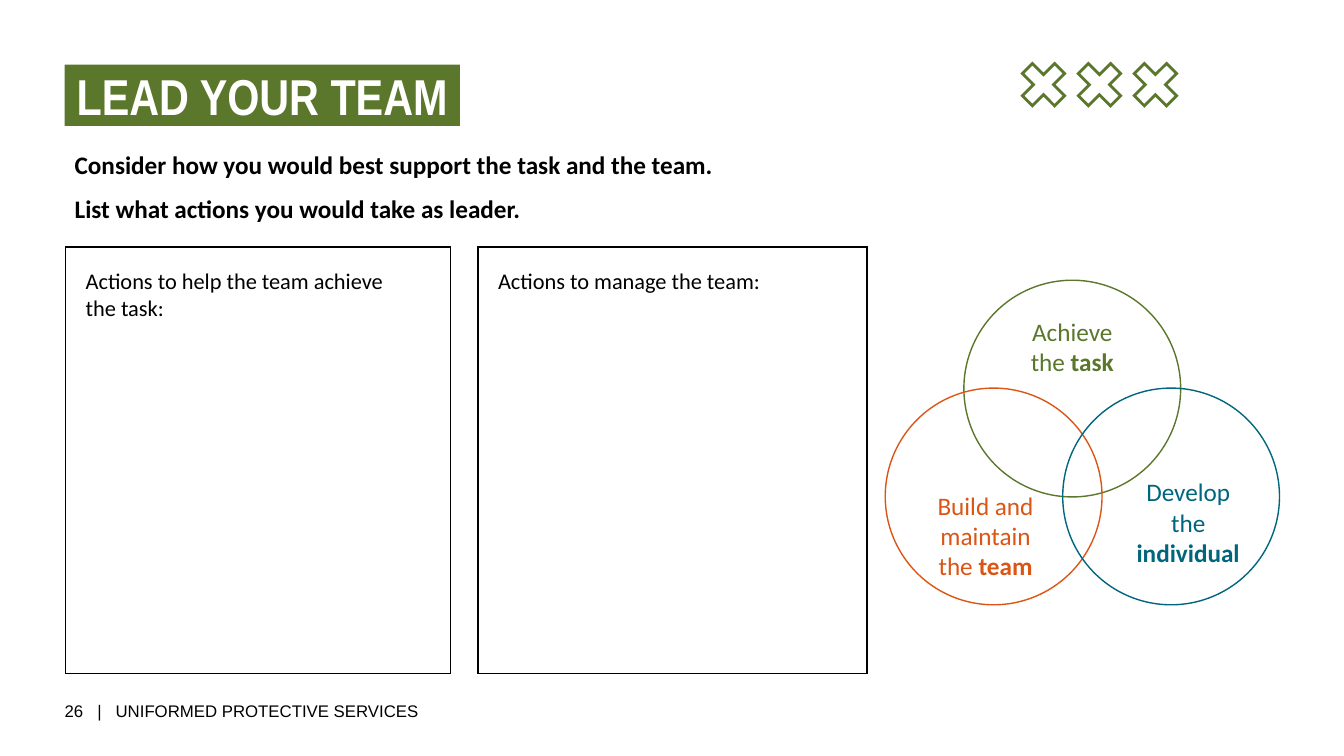
import dataclasses

import pptx
import pptx.dml.color
import pptx.enum.shapes
import pptx.enum.text
import pptx.oxml
import pptx.oxml.ns
import pptx.util

Inches = pptx.util.Inches
Pt = pptx.util.Pt
ALIGN = pptx.enum.text.PP_ALIGN
ANCHOR = pptx.enum.text.MSO_ANCHOR
SHAPE = pptx.enum.shapes.MSO_SHAPE
NAMESPACE = pptx.oxml.ns.nsdecls("a")


@dataclasses.dataclass(frozen=True)
class Theme:
    green: str = "5B772B"
    orange: str = "DC5514"
    teal: str = "00667D"
    black: str = "000000"
    white: str = "FFFFFF"
    heading_font: str = "Arial Narrow"
    body_font: str = "Calibri"
    footer_font: str = "Arial"
    title_size: int = 36
    text_size: int = 18
    box_size: int = 16
    footer_size: int = 12


def rgb(code):
    return pptx.dml.color.RGBColor.from_string(code)


def write_text(frame, paragraphs, *, font, size, color, bold=False, align=ALIGN.LEFT,
               anchor=ANCHOR.TOP, insets=(0.1, 0.1, 0.1, 0.1), after=0, wrap=True, gap=0):
    """Fill a frame; each paragraph is a list of (text, bold) pairs.

    A span that is a single space is widened by gap points.
    """
    frame.auto_size = pptx.enum.text.MSO_AUTO_SIZE.NONE
    frame.word_wrap = wrap
    frame.vertical_anchor = anchor
    (frame.margin_left, frame.margin_top,
     frame.margin_right, frame.margin_bottom) = map(Inches, insets)
    for index, spans in enumerate(paragraphs):
        para = frame.paragraphs[0] if index == 0 else frame.add_paragraph()
        para.alignment = align
        para.space_before = Pt(0)
        para.space_after = Pt(after)
        properties = para._p.get_or_add_pPr()
        properties.set("marL", "0")
        properties.set("indent", "0")
        properties.append(pptx.oxml.parse_xml(f"<a:buNone {NAMESPACE}/>"))
        for text, strong in spans:
            for number, line in enumerate(text.split("\n")):
                if number:
                    para.add_line_break()
                span = para.add_run()
                span.text = line
                span.font.name = font
                span.font.size = Pt(size)
                span.font.bold = bold or strong
                span.font.color.rgb = rgb(color)
                if gap and line == " ":
                    span._r.get_or_add_rPr().set("spc", str(round(gap * 100)))


class SlideBuilder:
    def __init__(self, deck, theme):
        self.theme = theme
        self.page = deck.slides.add_slide(deck.slide_layouts[1])
        self.shapes = self.page.shapes

    def place(self, shape, left, top, width, height):
        shape.left, shape.top = Inches(left), Inches(top)
        shape.width, shape.height = Inches(width), Inches(height)

    def outline(self, shape, color, width=1):
        """Leave only a line with sharp corners."""
        shape.shadow.inherit = False
        shape.fill.background()
        shape.line.color.rgb = rgb(color)
        shape.line.width = Pt(width)
        miter = pptx.oxml.parse_xml(f'<a:miter {NAMESPACE} lim="800000"/>')
        shape.line._get_or_add_ln().append(miter)

    def title(self, text, area):
        title = self.page.shapes.title
        self.place(title, *area)
        title.fill.solid()
        title.fill.fore_color.rgb = rgb(self.theme.green)
        write_text(title.text_frame, [[(text, True)]], font=self.theme.heading_font,
                   size=self.theme.title_size, color=self.theme.white,
                   anchor=ANCHOR.MIDDLE, insets=(0.12, 0, 0.08, 0), wrap=False)

    def instructions(self, lines, area):
        body = self.page.placeholders[1]
        self.place(body, *area)
        write_text(body.text_frame, [[(line, True)] for line in lines],
                   font=self.theme.body_font, size=self.theme.text_size,
                   color=self.theme.black, after=10)

    def crosses(self, centers, middle):
        """Draw a row of diagonal crosses as one outline."""
        right = [(0.21, 0.11), (0.1, 0), (0.21, -0.11), (0.11, -0.21), (0, -0.1)]
        left = [(-x, y) for x, y in reversed(right[:4])]
        lower = [(-0.11, 0.21), (0, 0.1), (0.11, 0.21)]
        points = right + left + lower
        builder = None
        for center in centers:
            corners = [(Inches(center + x), Inches(middle + y)) for x, y in points]
            if builder is None:
                builder = self.shapes.build_freeform(*corners[0])
            else:
                builder.move_to(*corners[0])
            builder.add_line_segments(corners[1:], close=True)
        self.outline(builder.convert_to_shape(), self.theme.green, 2)

    def answer_box(self, prompt, left, width):
        box = self.shapes.add_shape(SHAPE.RECTANGLE, Inches(left), Inches(2.45),
                                    Inches(width), Inches(4.23))
        self.outline(box, self.theme.black)
        write_text(box.text_frame, [[(prompt, False)]], font=self.theme.body_font,
                   size=self.theme.box_size, color=self.theme.black,
                   insets=(0.2, 0.2, 0.2, 0.2), after=10)

    def text(self, paragraphs, area, **style):
        box = self.shapes.add_textbox(*map(Inches, area))
        write_text(box.text_frame, paragraphs, **style)

    def venn(self, circles, diameter):
        """Group the overlapping circles with their labels on top."""
        self.shapes = self.page.shapes.add_group_shape().shapes
        for left, top, color, *_ in circles:
            circle = self.shapes.add_shape(SHAPE.OVAL, Inches(left), Inches(top),
                                           Inches(diameter), Inches(diameter))
            self.outline(circle, color)
        for _, _, color, label, area in circles:
            self.text([label], area, font=self.theme.body_font, size=self.theme.text_size,
                      color=color, align=ALIGN.CENTER, after=5)
        self.shapes = self.page.shapes

    def footer(self, parts, area):
        """Write the parts on one line with wide gaps between them."""
        spans = [(parts[0], False)]
        for part in parts[1:]:
            spans += [(" ", False), (part, False)]
        self.text([spans], area, font=self.theme.footer_font, size=self.theme.footer_size,
                  color=self.theme.black, anchor=ANCHOR.MIDDLE, insets=(0, 0, 0, 0),
                  wrap=False, gap=6.67)


def main():
    deck = pptx.Presentation()
    deck.slide_width, deck.slide_height = Inches(13.33), Inches(7.5)
    theme = Theme()
    slide = SlideBuilder(deck, theme)

    slide.title("LEAD YOUR TEAM", (0.64, 0.64, 3.92, 0.61))
    slide.instructions(["Consider how you would best support the task and the team.",
                        "List what actions you would take as leader."],
                       (0.64, 1.38, 11.02, 0.94))
    slide.crosses([10.35 + 0.555 * index for index in range(3)], 0.84)
    slide.answer_box("Actions to help the team achieve\nthe task:", 0.65, 3.82)
    slide.answer_box("Actions to manage the team:", 4.74, 3.86)
    slide.venn([
        (9.56, 2.78, theme.green, [("Achieve\nthe ", False), ("task", True)],
         (10.04, 3.04, 1.19, 0.8)),
        (8.78, 3.85, theme.orange, [("Build and maintain the ", False), ("team", True)],
         (9.05, 4.76, 1.45, 1.11)),
        (10.54, 3.85, theme.teal, [("Develop the ", False), ("individual", True)],
         (11.16, 4.63, 1.25, 0.67)),
    ], diameter=2.15)
    slide.footer(["26", "|", "UNIFORMED PROTECTIVE SERVICES"], (0.64, 6.95, 3.82, 0.2))
    deck.save("out.pptx")


if __name__ == "__main__":
    main()
